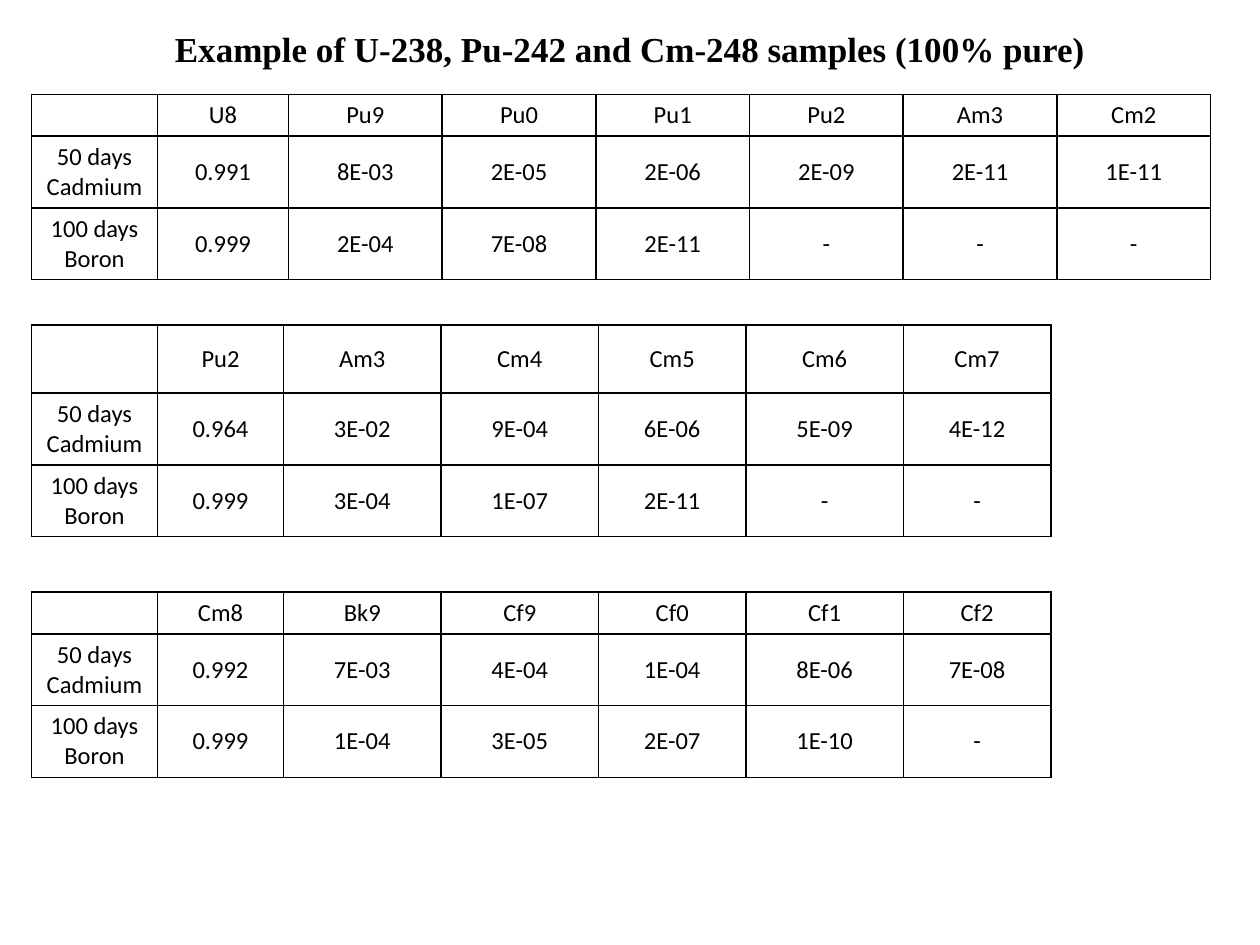
from lxml import etree
from pptx import Presentation
from pptx.dml.color import RGBColor
from pptx.enum.text import MSO_ANCHOR, PP_ALIGN
from pptx.oxml.ns import qn
from pptx.util import Inches, Pt

CENTER, MIDDLE = PP_ALIGN.CENTER, MSO_ANCHOR.MIDDLE
COLORS = {"ink": "000000", "paper": "FFFFFF"}
LEFT = 0.25
LABEL_ROW, VALUE_ROW = 0.33, 0.57
URANIUM_COLS = [1, 1.04] + [1.22] * 6
HEAVY_COLS = [1, 1, 1.25, 1.25, 1.17, 1.25, 1.17]

# top, header height, column widths, nuclides, cadmium values, boron values
SAMPLES = [
    (0.75, LABEL_ROW, URANIUM_COLS,
     "U8 Pu9 Pu0 Pu1 Pu2 Am3 Cm2",
     "0.991 8E-03 2E-05 2E-06 2E-09 2E-11 1E-11",
     "0.999 2E-04 7E-08 2E-11 - - -"),
    (4.7, LABEL_ROW, HEAVY_COLS,
     "Cm8 Bk9 Cf9 Cf0 Cf1 Cf2",
     "0.992 7E-03 4E-04 1E-04 8E-06 7E-08",
     "0.999 1E-04 3E-05 2E-07 1E-10 -"),
    (2.58, 0.54, HEAVY_COLS,
     "Pu2 Am3 Cm4 Cm5 Cm6 Cm7",
     "0.964 3E-02 9E-04 6E-06 5E-09 4E-12",
     "0.999 3E-04 1E-07 2E-11 - -"),
]
ROW_LABELS = ["", "50 days Cadmium", "100 days Boron"]


def write(tf, text, font, size, bold=False):
    """Put one centred paragraph into a text frame."""
    p = tf.paragraphs[0]
    p.text = text
    p.alignment = CENTER
    p.font.name, p.font.size, p.font.bold = font, Pt(size), bold
    p.font.color.rgb = RGBColor.from_string(COLORS["ink"])


def add_borders(cell):
    """Draw a 1 pt line on all four sides; call before setting the fill."""
    tcPr = cell._tc.get_or_add_tcPr()
    for side in ("a:lnL", "a:lnR", "a:lnT", "a:lnB"):
        ln = etree.SubElement(tcPr, qn(side), w=str(Pt(1)))
        fill = etree.SubElement(ln, qn("a:solidFill"))
        etree.SubElement(fill, qn("a:srgbClr"), val=COLORS["ink"])


prs = Presentation()
prs.slide_width, prs.slide_height = Inches(10), Inches(7.5)
s = prs.slides.add_slide(prs.slide_layouts[6])

title = s.shapes.add_textbox(0, Inches(0.17), prs.slide_width, Inches(0.43))
title.text_frame.word_wrap = True
write(title.text_frame, "Example of U-238, Pu-242 and Cm-248 samples (100% pure)",
      "Times New Roman", 20, bold=True)

for top, header, widths, *lines in SAMPLES:
    heights = [header, VALUE_ROW, VALUE_ROW]
    table = s.shapes.add_table(len(heights), len(widths), Inches(LEFT), Inches(top),
                               Inches(sum(widths)), Inches(sum(heights))).table
    table.horz_banding = False
    for col, width in zip(table.columns, widths):
        col.width = Inches(width)
    for r, (label, line) in enumerate(zip(ROW_LABELS, lines)):
        table.rows[r].height = Inches(heights[r])
        for c, text in enumerate([label] + line.split()):
            cell = table.cell(r, c)
            cell.vertical_anchor = MIDDLE
            cell.margin_top = cell.margin_bottom = 0
            write(cell.text_frame, text, "Calibri", 14)
            add_borders(cell)
            if r == 0:
                cell.fill.solid()
                cell.fill.fore_color.rgb = RGBColor.from_string(COLORS["paper"])
            else:
                cell.fill.background()

prs.save("out.pptx")
